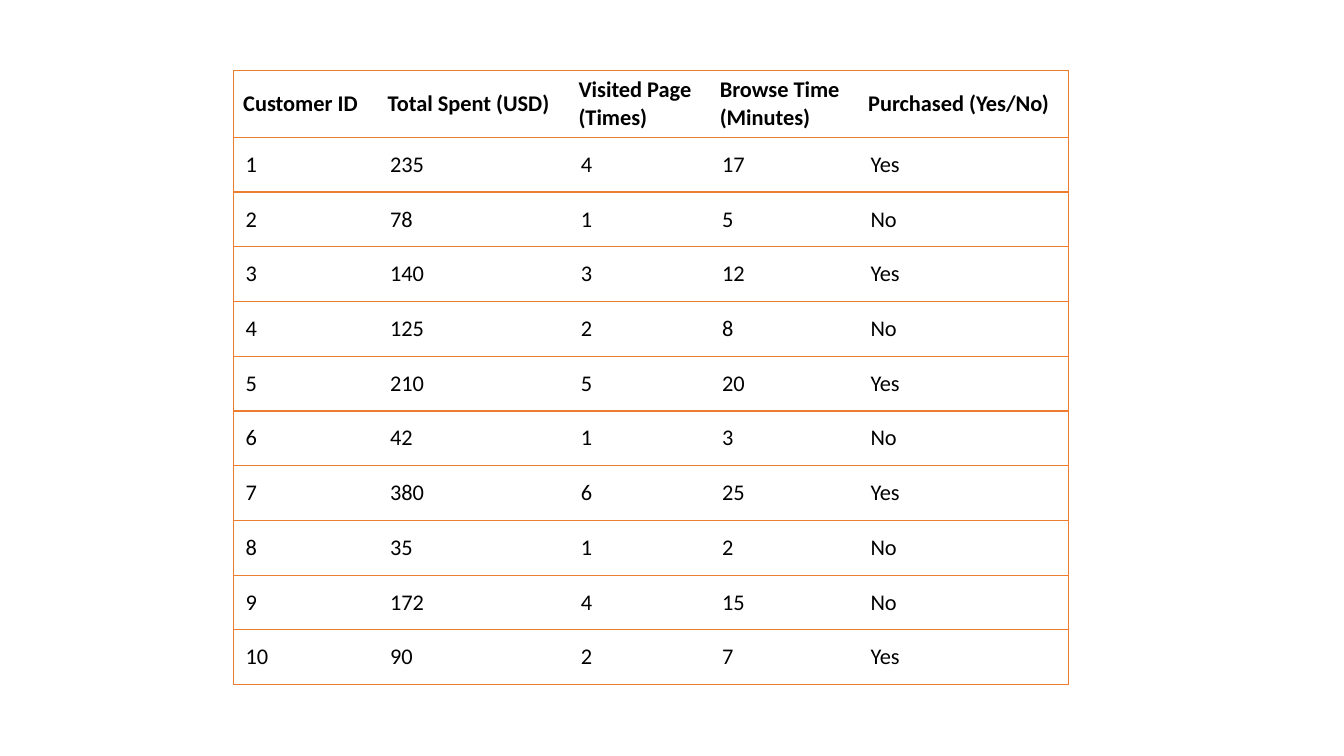
from dataclasses import dataclass

from lxml import etree
from pptx import Presentation
from pptx.dml.color import RGBColor
from pptx.enum.text import MSO_ANCHOR
from pptx.oxml.ns import qn
from pptx.util import Cm, Pt

MIDDLE = MSO_ANCHOR.MIDDLE

HEADERS = ["Customer ID", "Total Spent (USD)", "Visited Page (Times)",
           "Browse Time (Minutes)", "Purchased (Yes/No)"]
CUSTOMERS = [
    (1, 235, 4, 17, "Yes"),
    (2, 78, 1, 5, "No"),
    (3, 140, 3, 12, "Yes"),
    (4, 125, 2, 8, "No"),
    (5, 210, 5, 20, "Yes"),
    (6, 42, 1, 3, "No"),
    (7, 380, 6, 25, "Yes"),
    (8, 35, 1, 2, "No"),
    (9, 172, 4, 15, "No"),
    (10, 90, 2, 7, "Yes"),
]
COL_WIDTHS = [3.64, 4.81, 3.56, 3.74, 5.28]
HEADER_HEIGHT, ROW_HEIGHT = 1.68, 1.38


@dataclass(frozen=True)
class Theme:
    font: str = "Calibri"
    size: int = 16
    text: str = "000000"
    fill: str = "FFFFFF"
    border: str = "ED7D31"
    border_width: int = 1
    header_insets: tuple = (0.24, 0.11)
    body_insets: tuple = (0.3, 0.3)


class SlideBuilder:
    def __init__(self, slide, theme):
        self.s = slide
        self.theme = theme

    def table(self, left, top, widths, heights, rows):
        frame = self.s.shapes.add_table(
            len(rows), len(widths), Cm(left), Cm(top),
            Cm(sum(widths)), Cm(sum(heights)))
        tbl = frame.table
        tbl.horz_banding = False
        for col, width in zip(tbl.columns, widths):
            col.width = Cm(width)
        last = len(widths) - 1
        for i, (row, height, values) in enumerate(zip(tbl.rows, heights, rows)):
            row.height = Cm(height)
            for j, (cell, value) in enumerate(zip(row.cells, values)):
                self.borders(cell, left=j == 0, right=j == last)
                self.cell(cell, str(value), header=i == 0)

    def cell(self, cell, text, header):
        t = self.theme
        across, down = t.header_insets if header else t.body_insets
        cell.margin_left = cell.margin_right = Cm(across)
        cell.margin_top = cell.margin_bottom = Cm(down)
        cell.vertical_anchor = MIDDLE
        cell.fill.solid()
        cell.fill.fore_color.rgb = RGBColor.from_string(t.fill)
        p = cell.text_frame.paragraphs[0]
        p.text = text
        font = p.runs[0].font
        font.name = t.font
        font.size = Pt(t.size)
        font.bold = header
        font.color.rgb = RGBColor.from_string(t.text)

    def borders(self, cell, left, right):
        tc_pr = cell._tc.get_or_add_tcPr()
        sides = {"lnL": left, "lnR": right, "lnT": True, "lnB": True}
        for tag, visible in sides.items():
            ln = etree.SubElement(tc_pr, qn(f"a:{tag}"))
            if visible:
                ln.set("w", str(Pt(self.theme.border_width)))
                solid = etree.SubElement(ln, qn("a:solidFill"))
                etree.SubElement(solid, qn("a:srgbClr"), val=self.theme.border)
            else:
                etree.SubElement(ln, qn("a:noFill"))


def main():
    prs = Presentation()
    prs.slide_width, prs.slide_height = Cm(33.87), Cm(19.05)
    blank = prs.slide_layouts[6]
    builder = SlideBuilder(prs.slides.add_slide(blank), Theme())
    heights = [HEADER_HEIGHT] + [ROW_HEIGHT] * len(CUSTOMERS)
    builder.table(5.89, 1.78, COL_WIDTHS, heights, [HEADERS, *CUSTOMERS])
    prs.save("out.pptx")


if __name__ == "__main__":
    main()
